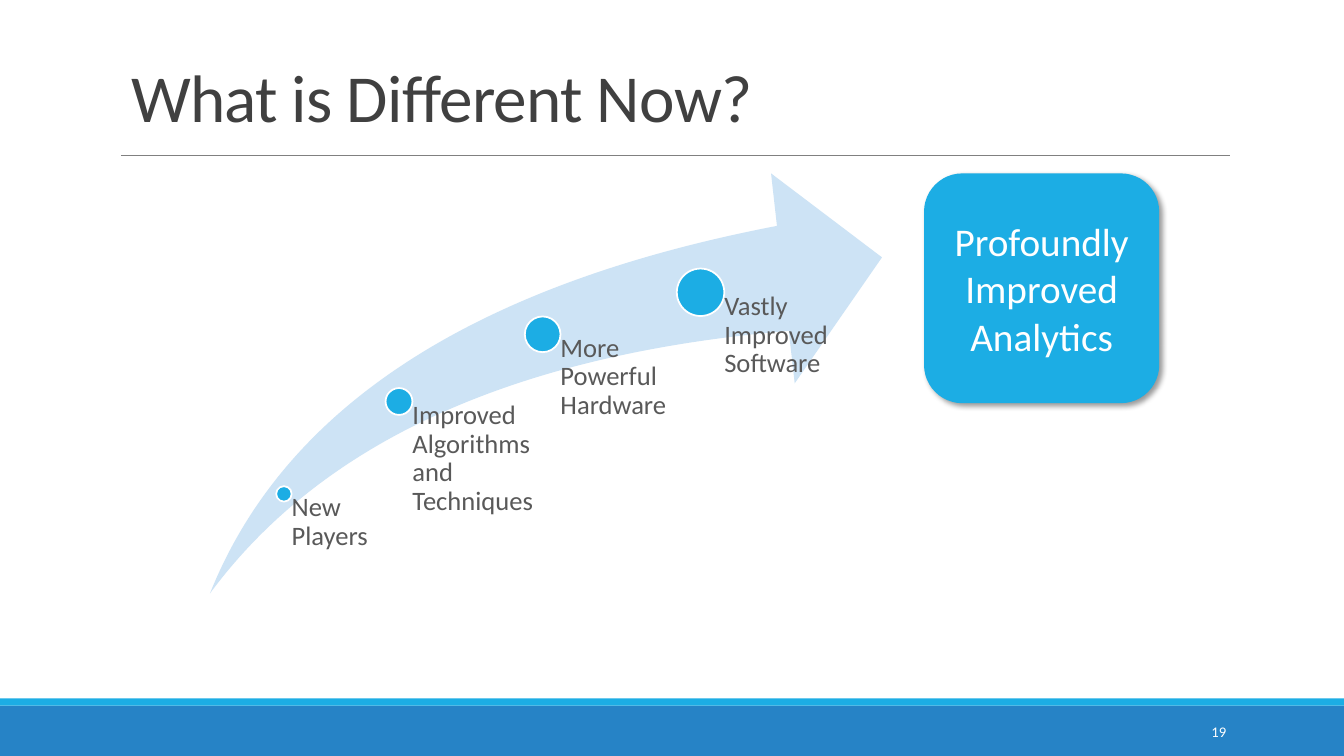
from lxml import etree
from pptx import Presentation
from pptx.dml.color import RGBColor
from pptx.enum.shapes import MSO_CONNECTOR, MSO_SHAPE
from pptx.enum.text import MSO_ANCHOR, MSO_AUTO_SIZE, PP_ALIGN
from pptx.oxml.ns import qn
from pptx.util import Inches, Pt

RECT, ROUND = MSO_SHAPE.RECTANGLE, MSO_SHAPE.ROUNDED_RECTANGLE
OVAL, SWOOSH = MSO_SHAPE.OVAL, MSO_SHAPE.SWOOSH_ARROW
STRAIGHT = MSO_CONNECTOR.STRAIGHT
TOP, MIDDLE, BOTTOM = MSO_ANCHOR.TOP, MSO_ANCHOR.MIDDLE, MSO_ANCHOR.BOTTOM
LEFT, CENTER, RIGHT = PP_ALIGN.LEFT, PP_ALIGN.CENTER, PP_ALIGN.RIGHT
FIXED = MSO_AUTO_SIZE.NONE

WHITE = RGBColor(0xFF, 0xFF, 0xFF)
BLACK = RGBColor(0, 0, 0)
BLUE = RGBColor(0x26, 0x83, 0xC6)
CYAN = RGBColor(0x1C, 0xAD, 0xE4)
PALE = RGBColor(0xCD, 0xE3, 0xF5)
INK = RGBColor(0x40, 0x40, 0x40)
SLATE = RGBColor(0x59, 0x59, 0x59)
GRAY = RGBColor(0x80, 0x80, 0x80)

COLS, ROWS = 160, 90
FLOOR = 70.68
STEPS = [
    ("New Players", 33.8, 58.8, 1.84, 13.7),
    ("Improved Algorithms and Techniques", 47.5, 47.8, 3.2, 16.8),
    ("More Powerful Hardware", 64.6, 39.8, 4.25, 16.8),
    ("Vastly Improved Software", 83.4, 34.8, 5.65, 16.8),
]


class Deck:
    """Draws styled elements on one slide, measured in grid columns and rows."""

    def __init__(self):
        self.prs = Presentation()
        self.prs.slide_width, self.prs.slide_height = Inches(13.33), Inches(7.5)
        self.slide = self.prs.slides.add_slide(self.prs.slide_layouts[5])
        self.shapes = self.slide.shapes
        self.font = "Calibri"

    def x(self, cols):
        return int(self.prs.slide_width * cols / COLS)

    def y(self, rows):
        return int(self.prs.slide_height * rows / ROWS)

    def box(self, left, top, width, height):
        return self.x(left), self.y(top), self.x(width), self.y(height)

    def apply(self, target, values):
        for name, value in values.items():
            setattr(target, name, value)

    def fill_text(self, shape, text, size, color, frame=None, para=None):
        body = shape.text_frame
        self.apply(body, {"word_wrap": True, "auto_size": FIXED, **(frame or {})})
        line = body.paragraphs[0]
        self.apply(line, {"alignment": LEFT, **(para or {})})
        run = line.add_run()
        run.text = text
        self.apply(run.font, {"name": self.font, "size": Pt(size)})
        run.font.color.rgb = color
        return run

    def title(self, text, *place):
        shape = self.shapes.title
        names = ("left", "top", "width", "height")
        self.apply(shape, dict(zip(names, self.box(*place))))
        run = self.fill_text(shape, text, 48, INK, {"vertical_anchor": BOTTOM},
                             {"line_spacing": 0.85})
        run.font._element.set("spc", "-50")

    def shape(self, kind, fill, *place, edge=None):
        shape = self.shapes.add_shape(kind, *self.box(*place))
        shape.shadow.inherit = False
        shape.fill.solid()
        shape.fill.fore_color.rgb = fill
        if edge:
            shape.line.color.rgb = edge
            shape.line.width = Pt(1.25)
        else:
            shape.line.fill.background()
        return shape

    def label(self, text, size, color, *place, frame=None, para=None):
        shape = self.shapes.add_textbox(*self.box(*place))
        self.fill_text(shape, text, size, color, frame, para)

    def rule(self, left, right, row):
        line = self.shapes.add_connector(
            STRAIGHT, self.x(left), self.y(row), self.x(right), self.y(row))
        line.line.color.rgb = GRAY
        line.line.width = Pt(0.5)
        etree.SubElement(line._element.spPr, qn("a:effectLst"))

    def shade(self, shape):
        effects = shape._element.spPr.find(qn("a:effectLst"))
        outer = etree.SubElement(effects, qn("a:outerShdw"), {
            "blurRad": str(Pt(4)), "dist": str(Pt(3)),
            "dir": str(45 * 60000), "algn": "tl", "rotWithShape": "0"})
        color = etree.SubElement(outer, qn("a:srgbClr"), val=str(BLACK))
        etree.SubElement(color, qn("a:alpha"), val="40000")

    def step(self, text, col, row, size, width):
        self.shape(OVAL, CYAN, col - size / 2, row - size / 2, size, size,
                   edge=WHITE)
        frame = {"margin_left": self.x(size / 2), "margin_top": 0,
                 "margin_right": 0, "margin_bottom": 0, "vertical_anchor": TOP}
        self.label(text, 19, SLATE, col, row, width, FLOOR - row,
                   frame=frame, para={"line_spacing": 0.9})


def main():
    deck = Deck()
    deck.shape(RECT, BLUE, 0, 84, COLS, 6)
    deck.shape(RECT, CYAN, 0, 83.16, COLS, 0.84)
    deck.rule(14.4, 146.4, 18.48)
    deck.title("What is Different Now?", 14.4, 4.08, 132, 12.72)

    arrow = deck.shape(SWOOSH, PALE, 25, 20.64, 80, 50)
    arrow.adjustments[0] = arrow.adjustments[1] = 0.25
    for step in STEPS:
        deck.step(*step)

    result = deck.shape(ROUND, CYAN, 110, 20.64, 28, 27.36)
    deck.shade(result)
    deck.fill_text(result, "Profoundly Improved Analytics", 28, WHITE,
                   {"vertical_anchor": MIDDLE}, {"alignment": CENTER})
    deck.label("19", 10.5, WHITE, 130, 84.72, 17.16, 4.8,
               frame={"vertical_anchor": MIDDLE}, para={"alignment": RIGHT})
    deck.prs.save("out.pptx")


if __name__ == "__main__":
    main()
